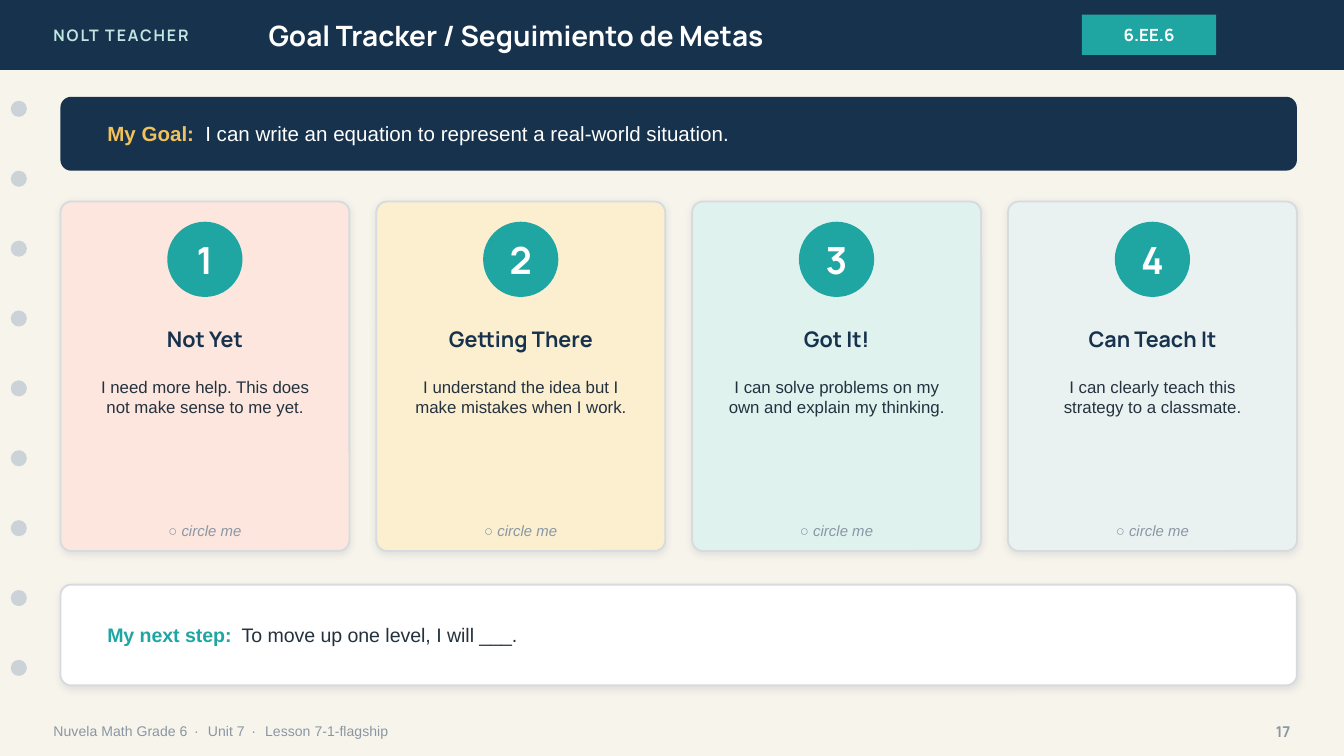
from dataclasses import dataclass
from itertools import chain

from lxml.etree import SubElement
from pptx import Presentation
from pptx.dml.color import RGBColor
from pptx.enum.shapes import MSO_SHAPE
from pptx.enum.text import MSO_ANCHOR, PP_ALIGN
from pptx.oxml.ns import qn
from pptx.util import Inches, Pt


@dataclass(frozen=True)
class Theme:
    navy: str = "17324D"
    teal: str = "1FA6A2"
    mint: str = "BFE6E2"
    gold: str = "F2C15B"
    cream: str = "F7F4EC"
    white: str = "FFFFFF"
    ink: str = "24323F"
    muted: str = "8A96A3"
    dot: str = "CBD3D9"
    border: str = "D6DBDF"
    shadow: str = "1C2E42"
    display: str = "Manrope"
    body: str = "Arial"
    title_size: float = 15
    number_size: float = 20
    level_size: float = 11.5
    goal_size: float = 11
    step_size: float = 10.5
    text_size: float = 9
    brand_size: float = 8.5
    small_size: float = 8
    footer_size: float = 7.5


THEME = Theme()
WIDTH, HEIGHT = 10, 5.625
HEADER = 0.52

# Card grid
LEFT, CONTENT_WIDTH = 0.45, 9.2
COLUMNS, GAP = 4, 0.2
CARD_WIDTH = (CONTENT_WIDTH - (COLUMNS - 1) * GAP) / COLUMNS
CARD_TOP, CARD_HEIGHT = 1.5, 2.6
CIRCLE = 0.56
RADIUS = 0.08

LEVELS = [
    ("Not Yet", "I need more help. This does not make sense to me yet.", "FCE6DE"),
    ("Getting There", "I understand the idea but I make mistakes when I work.", "FBEFD0"),
    ("Got It!", "I can solve problems on my own and explain my thinking.", "DFF2EE"),
    ("Can Teach It", "I can clearly teach this strategy to a classmate.", "EAF2F1"),
]


def color(value):
    return RGBColor.from_string(value)


def add_panel(page, kind, left, top, width, height, fill):
    """A filled shape without outline or shadow."""
    panel = page.shapes.add_shape(
        kind, Inches(left), Inches(top), Inches(width), Inches(height))
    panel.shadow.inherit = False
    panel.fill.solid()
    panel.fill.fore_color.rgb = color(fill)
    panel.line.fill.background()
    return panel


def add_rounded(page, left, top, width, height, fill, raised=True):
    """A round-cornered panel, optionally with a border and a soft shadow."""
    panel = add_panel(page, MSO_SHAPE.ROUNDED_RECTANGLE, left, top, width, height, fill)
    panel.adjustments[0] = RADIUS / min(width, height)
    if raised:
        panel.line.color.rgb = color(THEME.border)
        panel.line.width = Pt(1)
        effects = panel._element.spPr.find(qn("a:effectLst"))
        shadow = SubElement(effects, qn("a:outerShdw"), blurRad=str(Pt(4)),
                            dist=str(Pt(1)), dir="5400000", algn="bl", rotWithShape="0")
        tint = SubElement(shadow, qn("a:srgbClr"), val=THEME.shadow)
        SubElement(tint, qn("a:alpha"), val="10000")


def write(box, text, size, ink, face=THEME.body, bold=False, italic=False,
          align=PP_ALIGN.LEFT, anchor=MSO_ANCHOR.MIDDLE, spacing=0):
    """Fill a box with one uniformly styled paragraph."""
    frame = box.text_frame
    frame.word_wrap = True
    frame.vertical_anchor = anchor
    para = frame.paragraphs[0]
    para.alignment = align
    para.font.name = face
    para.font.size = Pt(size)
    para.font.bold = bold
    para.font.italic = italic
    para.font.color.rgb = color(ink)
    span = para.add_run()
    span.text = text
    if spacing:
        set_spacing(span, spacing)


def set_spacing(span, points):
    span._r.get_or_add_rPr().set("spc", str(round(points * 100)))


def add_box(page, left, top, width, height):
    return page.shapes.add_textbox(
        Inches(left), Inches(top), Inches(width), Inches(height))


def add_prompt(page, top, height, label, label_color, sentence, ink, size, tab):
    """A bold label followed by a sentence that starts at a tab stop."""
    frame = add_box(page, LEFT + 0.25, top, CONTENT_WIDTH - 0.5, height).text_frame
    frame.word_wrap = True
    frame.vertical_anchor = MSO_ANCHOR.MIDDLE
    para = frame.paragraphs[0]
    tabs = SubElement(para._p.get_or_add_pPr(), qn("a:tabLst"))
    SubElement(tabs, qn("a:tab"), pos=str(Inches(tab)), algn="l")
    para.font.name = THEME.body
    para.font.size = Pt(size)
    for text, tint, bold in ((label + "\t", label_color, True), (sentence, ink, False)):
        span = para.add_run()
        span.text = text
        span.font.bold = bold
        span.font.color.rgb = color(tint)


def add_header(page):
    add_panel(page, MSO_SHAPE.RECTANGLE, 0, 0, WIDTH, HEADER, THEME.navy)
    write(add_box(page, 0.3, 0, 2.4, HEADER), "NOLT TEACHER", THEME.brand_size,
          THEME.mint, THEME.display, bold=True, spacing=1)
    write(add_box(page, 1.9, 0, 5.6, HEADER), "Goal Tracker / Seguimiento de Metas",
          THEME.title_size, THEME.white, THEME.display, bold=True)
    badge = add_panel(page, MSO_SHAPE.RECTANGLE, 8.05, 0.11, 1, 0.3, THEME.teal)
    write(badge, "6.EE.6", THEME.text_size, THEME.white, THEME.display,
          bold=True, align=PP_ALIGN.CENTER)


def add_binder_holes(page):
    for row in range(9):
        add_panel(page, MSO_SHAPE.OVAL, 0.08, 0.75 + row * 0.52, 0.12, 0.12, THEME.dot)


def add_footer(page, parts, number):
    top, height = 5.3, 0.28
    frame = add_box(page, 0.3, top, 7, height).text_frame
    frame.word_wrap = True
    frame.vertical_anchor = MSO_ANCHOR.MIDDLE
    para = frame.paragraphs[0]
    para.font.name = THEME.body
    para.font.size = Pt(THEME.footer_size)
    para.font.color.rgb = color(THEME.muted)
    # Separators are tracked out to widen the gaps between parts
    for text in list(chain.from_iterable((" · ", part) for part in parts))[1:]:
        span = para.add_run()
        span.text = text
        if text == " · ":
            set_spacing(span, 1.4)
    write(add_box(page, 9.2, top, 0.5, height), number, THEME.small_size,
          THEME.muted, THEME.display, bold=True, align=PP_ALIGN.RIGHT)


def add_level_card(page, column, name, description, fill):
    left = LEFT + column * (CARD_WIDTH + GAP)
    center = PP_ALIGN.CENTER
    add_rounded(page, left, CARD_TOP, CARD_WIDTH, CARD_HEIGHT, fill)

    circle = add_panel(page, MSO_SHAPE.OVAL, left + (CARD_WIDTH - CIRCLE) / 2,
                       CARD_TOP + 0.15, CIRCLE, CIRCLE, THEME.teal)
    write(circle, str(column + 1), THEME.number_size, THEME.white, THEME.display,
          bold=True, align=center)

    def row(offset, height, inset):
        return add_box(page, left + inset, CARD_TOP + offset,
                       CARD_WIDTH - 2 * inset, height)

    write(row(0.85, 0.35, 0.05), name, THEME.level_size, THEME.navy, THEME.display,
          bold=True, align=center)
    write(row(1.25, 1.15, 0.12), description, THEME.text_size, THEME.ink,
          align=center, anchor=MSO_ANCHOR.TOP)
    write(row(2.35, 0.2, 0.05), "○ circle me", THEME.small_size, THEME.muted,
          italic=True, align=center)


def main():
    deck = Presentation()
    deck.slide_width, deck.slide_height = Inches(WIDTH), Inches(HEIGHT)
    page = deck.slides.add_slide(deck.slide_layouts[6])
    page.background.fill.solid()
    page.background.fill.fore_color.rgb = color(THEME.cream)

    add_header(page)
    add_binder_holes(page)
    add_footer(page, ["Nuvela Math Grade 6", "Unit 7", "Lesson 7-1-flagship"], "17")

    # Goal banner
    add_rounded(page, LEFT, 0.72, CONTENT_WIDTH, 0.55, THEME.navy, raised=False)
    add_prompt(page, 0.72, 0.55, "My Goal:", THEME.gold,
               "I can write an equation to represent a real-world situation.",
               THEME.white, THEME.goal_size, tab=0.73)

    # Self-rating levels
    for column, level in enumerate(LEVELS):
        add_level_card(page, column, *level)

    # Next step
    add_rounded(page, LEFT, 4.35, CONTENT_WIDTH, 0.75, THEME.white)
    add_prompt(page, 4.35, 0.75, "My next step:", THEME.teal,
               "To move up one level, I will ___.", THEME.ink, THEME.step_size, tab=1)

    deck.save("out.pptx")


if __name__ == "__main__":
    main()
